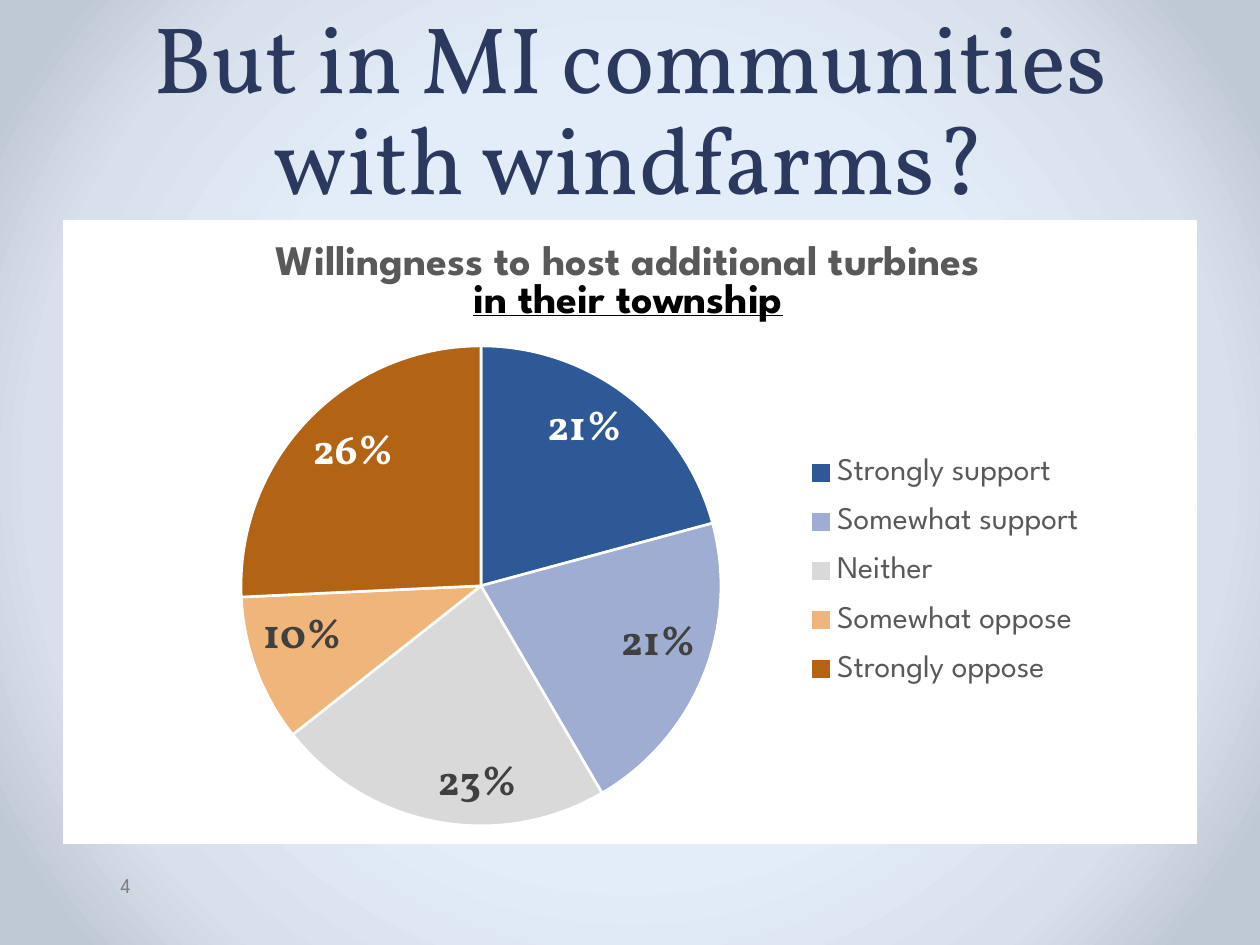
from dataclasses import dataclass

from pptx import Presentation
from pptx import util as u
from pptx.chart.data import CategoryChartData
from pptx.dml.color import RGBColor
from pptx.enum import chart as ch
from pptx.enum import text as tx
from pptx.oxml import parse_xml
from pptx.oxml.ns import nsdecls


@dataclass(frozen=True)
class Theme:
    head: str = "Vollkorn"
    body: str = "League Spartan"
    navy: str = "2C395E"
    gray: str = "595959"
    dark: str = "404040"
    mute: str = "808080"
    black: str = "000000"
    white: str = "FFFFFF"
    glow: tuple = ((50, "E3EDF9"), (76, "D8E0EB"), (92, "BFC9D4"))
    title: int = 54
    lead: int = 58
    large: int = 24
    key: int = 18
    small: int = 12


@dataclass(frozen=True)
class Box:
    left: int
    top: int
    width: int
    height: int

    def emu(self) -> list:
        return [px(n) for n in (self.left, self.top, self.width, self.height)]


@dataclass(frozen=True)
class Slice:
    name: str
    share: float
    color: str
    ink: str = Theme.dark


T = Theme()
DPI = 126
HEAD = Box(63, 0, 1134, 220)
PANEL = Box(63, 220, 1134, 624)
PIE = Box(241, 346, 480, 480)
KEY = Box(800, 438, 290, 266)
NAME = Box(272, 240, 704, 82)
NUMBER = Box(66, 866, 77, 50)
SLICES = (
    Slice("Strongly support", 0.21, "2F5897", T.white),
    Slice("Somewhat support", 0.21, "A0ADD2"),
    Slice("Neither", 0.23, "D9D9D9"),
    Slice("Somewhat oppose", 0.10, "F0B57A"),
    Slice("Strongly oppose", 0.26, "B26314", T.white),
)


def px(n: int) -> int:
    return round(n * u.Inches(1) / DPI)


def style(font, face: str, size: int, color: str, bold: bool = False) -> None:
    font.name, font.size, font.bold = face, u.Pt(size), bold
    font.color.rgb = RGBColor.from_string(color)


def backdrop(slide) -> None:
    """Fill the background with a round gradient."""
    slide.background.fill.solid()
    props = slide.element.xpath("./p:cSld/p:bg/p:bgPr")[0]
    stops = "".join(
        f'<a:gs pos="{at * 1000}"><a:srgbClr val="{color}"/></a:gs>'
        for at, color in T.glow
    )
    props.replace(props[0], parse_xml(
        f'<a:gradFill {nsdecls("a")} rotWithShape="1"><a:gsLst>{stops}</a:gsLst>'
        '<a:path path="circle"><a:fillToRect l="50000" t="50000" r="50000" '
        'b="50000"/></a:path></a:gradFill>'))


def heading(slide) -> None:
    shape = slide.shapes.title
    shape.left, shape.top, shape.width, shape.height = HEAD.emu()
    frame = shape.text_frame
    frame.text = "But in MI communities with windfarms?"
    frame.vertical_anchor = tx.MSO_ANCHOR.BOTTOM
    frame.auto_size = tx.MSO_AUTO_SIZE.NONE
    para = frame.paragraphs[0]
    para.alignment = tx.PP_ALIGN.CENTER
    para.line_spacing = u.Pt(T.lead)
    style(para.font, T.head, T.title, T.navy)


def place(node, box: Box, index: int, sized: bool = True, inner: bool = False) -> None:
    """Give a chart part a fixed place, as shares of the panel."""
    for old in node.xpath("./c:layout"):
        node.remove(old)
    parts = {
        "x": (box.left - PANEL.left) / PANEL.width,
        "y": (box.top - PANEL.top) / PANEL.height,
    }
    if sized:
        parts |= {"w": box.width / PANEL.width, "h": box.height / PANEL.height}
    modes = "".join(f'<c:{k}Mode val="edge"/>' for k in "xy")
    sizes = "".join(f'<c:{k} val="{v:.4f}"/>' for k, v in parts.items())
    target = '<c:layoutTarget val="inner"/>' if inner else ""
    node.insert(index, parse_xml(
        f'<c:layout {nsdecls("c")}><c:manualLayout>{target}{modes}{sizes}'
        "</c:manualLayout></c:layout>"))


def caption(chart) -> None:
    frame = chart.chart_title.text_frame
    frame.text = "Willingness to host additional turbines\nin their township"
    for para, color in zip(frame.paragraphs, (T.gray, T.black)):
        para.alignment = tx.PP_ALIGN.CENTER
        style(para.font, T.body, T.large, color, True)
    frame.paragraphs[1].font.underline = True
    chart.chart_title.include_in_layout = False


def legend(chart) -> None:
    chart.has_legend = True
    chart.legend.position = ch.XL_LEGEND_POSITION.RIGHT
    chart.legend.include_in_layout = False
    style(chart.legend.font, T.body, T.key, T.gray)


def paint(plot) -> None:
    """Color the slices and their labels."""
    plot.vary_by_categories = True
    plot.has_data_labels = True
    series = plot.series[0]
    labels = series.data_labels
    labels.show_value = True
    labels.show_percentage = False
    labels.number_format, labels.number_format_is_linked = "0%", False
    labels.position = ch.XL_LABEL_POSITION.INSIDE_END
    style(labels.font, T.head, T.large, T.dark, True)
    for i, part in enumerate(SLICES):
        point = series.points[i]
        point.format.fill.solid()
        point.format.fill.fore_color.rgb = RGBColor.from_string(part.color)
        point.format.line.color.rgb = RGBColor.from_string(T.white)
        point.format.line.width = u.Pt(1.5)
        if part.ink != T.dark:
            style(point.data_label.font, T.head, T.large, part.ink, True)
            point.data_label.position = ch.XL_LABEL_POSITION.INSIDE_END


def survey(slide) -> None:
    data = CategoryChartData(number_format="0%")
    data.categories = [part.name for part in SLICES]
    data.add_series("Series 1", [part.share for part in SLICES])
    chart = slide.shapes.add_chart(ch.XL_CHART_TYPE.PIE, *PANEL.emu(), data).chart
    style(chart.font, T.head, 10, T.black)
    caption(chart)
    legend(chart)
    paint(chart.plots[0])
    body = chart.element.xpath("./c:chart")[0]
    place(body.xpath("./c:title")[0], NAME, 1, sized=False)
    place(body.xpath("./c:plotArea")[0], PIE, 0, inner=True)
    place(body.xpath("./c:legend")[0], KEY, 1)
    body.addnext(parse_xml(
        f'<c:spPr {nsdecls("c", "a")}><a:solidFill><a:srgbClr val="{T.white}"/>'
        "</a:solidFill><a:ln><a:noFill/></a:ln></c:spPr>"))


def number(slide) -> None:
    frame = slide.shapes.add_textbox(*NUMBER.emu()).text_frame
    frame.word_wrap = True
    frame.text = "4"
    para = frame.paragraphs[0]
    para.alignment = tx.PP_ALIGN.RIGHT
    style(para.font, T.body, T.small, T.mute)


def main() -> None:
    deck = Presentation()
    deck.slide_width, deck.slide_height = u.Inches(10), u.Inches(7.5)
    slide = deck.slides.add_slide(deck.slide_layouts[5])
    backdrop(slide)
    heading(slide)
    survey(slide)
    number(slide)
    deck.save("out.pptx")


if __name__ == "__main__":
    main()
